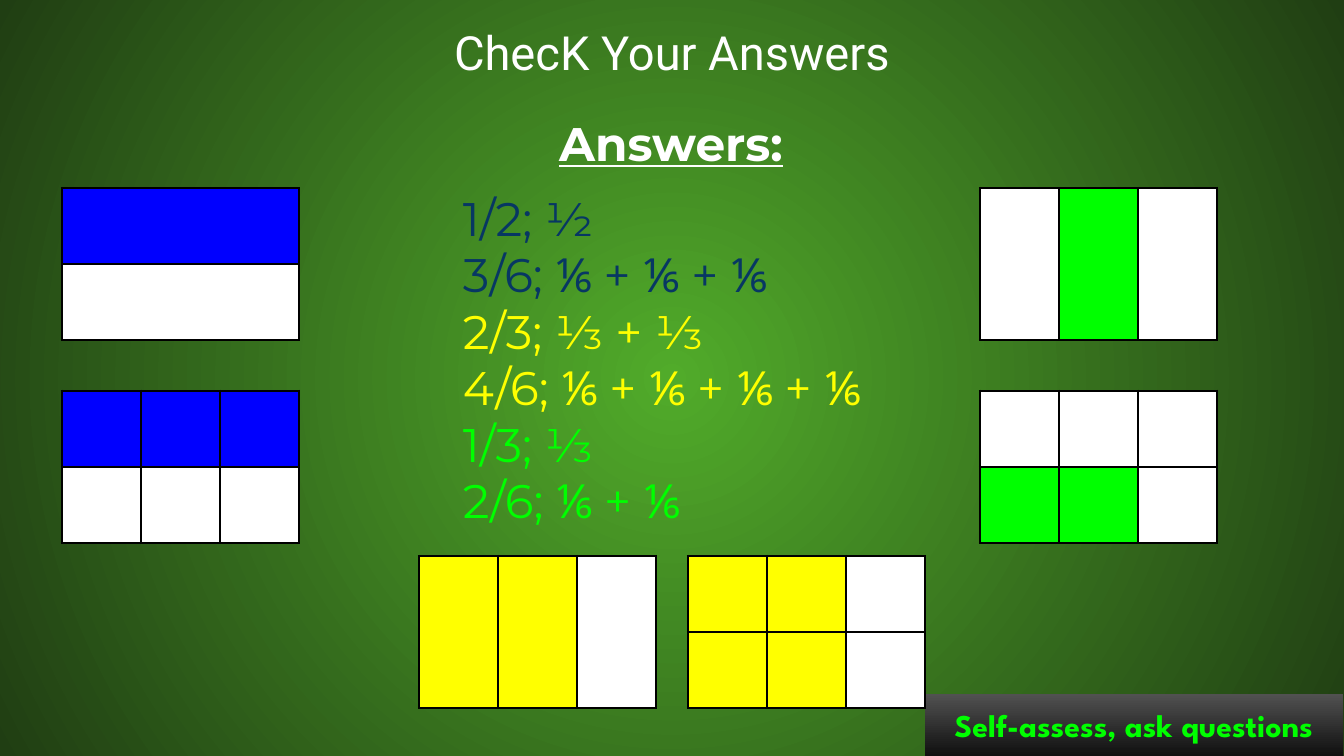
from dataclasses import dataclass

from lxml.etree import SubElement
from pptx import Presentation
from pptx.dml.color import RGBColor
from pptx.enum.shapes import MSO_SHAPE as Shape
from pptx.enum.text import MSO_ANCHOR as Anchor, PP_ALIGN as Align
from pptx.oxml.ns import qn
from pptx.util import Emu, Pt

EMU_PER_PX = 914400 / 134.4
COLORS = {
    "white": "FFFFFF", "black": "000000", "navy": "073763",
    "blue": "0000FF", "yellow": "FFFF00", "green": "00FF00",
    "background_center": "51AB2A", "background_edge": "203E13",
    "banner_top": "515151", "banner_bottom": "101010",
}
COLUMN_WIDTH, ROW_HEIGHT = 79, 76
COLUMNS, ROWS = 3, 2
BORDER_PT = 1.5
NO_STYLE = "{2D5ABB26-0587-4C30-8999-92F81FD0307C}"


@dataclass
class Line:
    text: str
    color: str
    font: dict
    paragraph: dict


@dataclass
class FractionModel:
    left: int
    top: int
    color: str
    shaded: tuple  # one string per row, "x" for a shaded cell
    column_lines: bool = True
    row_lines: bool = True


def px(length: int) -> Emu:
    return Emu(round(length * EMU_PER_PX))


def rgb(name: str) -> RGBColor:
    return RGBColor.from_string(COLORS[name])


def set_attributes(target, values: dict) -> None:
    for name, value in values.items():
        setattr(target, name, value)


def set_gradient(fill, first: str, last: str) -> None:
    fill.gradient()
    for stop, color in zip(fill.gradient_stops, (first, last)):
        stop.color.rgb = rgb(color)


def write_lines(text_frame, lines: list, anchor=Anchor.TOP) -> None:
    inset = px(13)
    set_attributes(text_frame, {
        "word_wrap": True, "vertical_anchor": anchor,
        "margin_left": inset, "margin_right": inset,
        "margin_top": inset, "margin_bottom": inset,
    })
    for index, line in enumerate(lines):
        paragraph = text_frame.add_paragraph() if index else text_frame.paragraphs[0]
        set_attributes(paragraph, line.paragraph)
        run = paragraph.add_run()
        run.text = line.text
        set_attributes(run.font, line.font)
        run.font.color.rgb = rgb(line.color)


def add_text(slide, box: tuple, lines: list, anchor=Anchor.TOP) -> None:
    shape = slide.shapes.add_textbox(*map(px, box))
    write_lines(shape.text_frame, lines, anchor)


def add_border(cell, side: str) -> None:
    properties = cell._tc.get_or_add_tcPr()
    line = SubElement(properties, qn(f"a:ln{side}"), w=str(Pt(BORDER_PT)))
    fill = SubElement(line, qn("a:solidFill"))
    SubElement(fill, qn("a:srgbClr"), val=COLORS["black"])


def add_model(slide, model: FractionModel) -> None:
    frame = slide.shapes.add_table(
        ROWS, COLUMNS, px(model.left), px(model.top),
        px(COLUMNS * COLUMN_WIDTH), px(ROWS * ROW_HEIGHT))
    table = frame.table
    set_attributes(table, {"first_row": False, "horz_banding": False})
    table._tbl.tblPr.find(qn("a:tableStyleId")).text = NO_STYLE
    for column in table.columns:
        column.width = px(COLUMN_WIDTH)
    for row in table.rows:
        row.height = px(ROW_HEIGHT)
    for r, marks in enumerate(model.shaded):
        for c, mark in enumerate(marks):
            cell = table.cell(r, c)
            sides = {
                "L": c == 0 or model.column_lines,
                "R": c == COLUMNS - 1 or model.column_lines,
                "T": r == 0 or model.row_lines,
                "B": r == ROWS - 1 or model.row_lines,
            }
            for side, drawn in sides.items():
                if drawn:
                    add_border(cell, side)
            cell.fill.solid()
            cell.fill.fore_color.rgb = rgb(model.color if mark == "x" else "white")


def add_background(slide) -> None:
    set_gradient(slide.background.fill, "background_center", "background_edge")
    gradient = next(slide.element.iter(qn("a:gradFill")))
    gradient.remove(gradient.find(qn("a:lin")))
    circle = SubElement(gradient, qn("a:path"), {"path": "circle"})
    SubElement(circle, qn("a:fillToRect"), dict.fromkeys("ltrb", "50000"))


def add_banner(slide) -> None:
    banner = slide.shapes.add_shape(Shape.RECTANGLE, *map(px, (925, 694, 418, 62)))
    banner.shadow.inherit = False
    set_gradient(banner.fill, "banner_top", "banner_bottom")
    banner.fill.gradient_angle = 270
    banner.line.fill.background()
    font = {"name": "League Spartan", "size": Pt(17), "bold": True}
    write_lines(banner.text_frame, [
        Line("Self-assess, ask questions", "green", font, {"alignment": Align.CENTER}),
    ], Anchor.MIDDLE)


TITLE_FONT = {"name": "Roboto", "size": Pt(25.2)}
ANSWER_FONT = {"name": "Montserrat", "size": Pt(25.2)}
HEADING_FONT = ANSWER_FONT | {"bold": True, "underline": True}
CENTERED = {"alignment": Align.CENTER}

ANSWERS = [
    ("1/2; ½", "navy"),
    ("3/6; ⅙ + ⅙ + ⅙", "navy"),
    ("2/3; ⅓ + ⅓", "yellow"),
    ("4/6; ⅙ + ⅙ + ⅙ + ⅙", "yellow"),
    ("1/3; ⅓", "green"),
    ("2/6; ⅙ + ⅙", "green"),
]

MODELS = [
    FractionModel(62, 188, "blue", ("xxx", "   "), column_lines=False),
    FractionModel(62, 391, "blue", ("xxx", "   ")),
    FractionModel(688, 556, "yellow", ("xx ", "xx ")),
    FractionModel(419, 556, "yellow", ("xx ", "xx "), row_lines=False),
    FractionModel(980, 188, "green", (" x ", " x "), row_lines=False),
    FractionModel(980, 391, "green", ("   ", "xx ")),
]


def main() -> None:
    presentation = Presentation()
    set_attributes(presentation, {"slide_width": px(1344), "slide_height": px(756)})
    slide = presentation.slides.add_slide(presentation.slide_layouts[6])
    add_background(slide)
    add_banner(slide)

    # Title and list of answers
    add_text(slide, (12, 11, 1320, 81),
             [Line("ChecK Your Answers", "white", TITLE_FONT, CENTERED)], Anchor.MIDDLE)
    lines = [Line("Answers:", "white", HEADING_FONT, CENTERED)]
    for index, (text, color) in enumerate(ANSWERS):
        spacing = {"space_before": Pt(0 if index else 10)}
        lines.append(Line(text, color, ANSWER_FONT, spacing))
    add_text(slide, (450, 101, 442, 446), lines)

    # Shaded fraction models
    for model in MODELS:
        add_model(slide, model)

    presentation.save("out.pptx")


if __name__ == "__main__":
    main()
